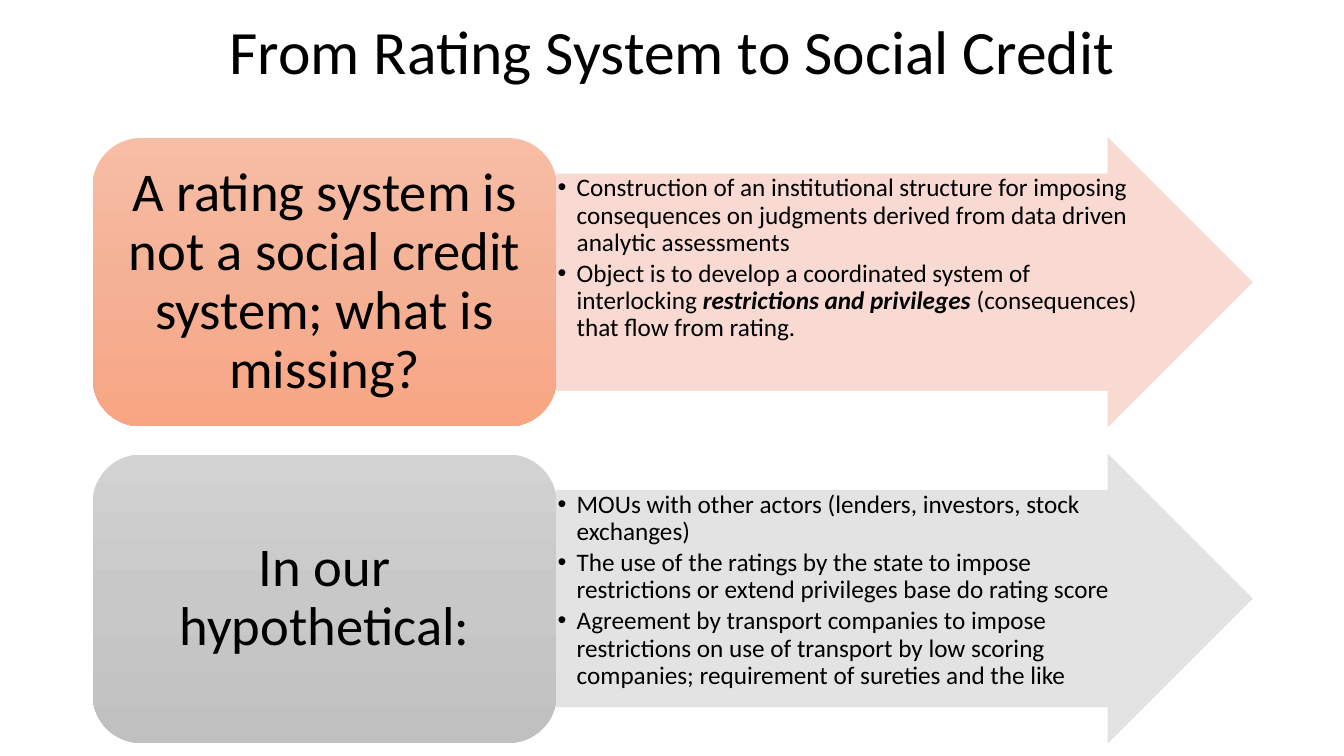
"""Build the slide on moving from a rating system to social credit."""
from copy import deepcopy

from lxml import etree
from pptx import Presentation
from pptx import util as u
from pptx.dml.color import RGBColor
from pptx.enum import shapes, text
from pptx.oxml import ns

COLOURS = {
    "text": "000000",
    "orange arrow": "F8D7CE",
    "orange": ("F7BDA5", "F5B196", "F8A582"),
    "grey arrow": "E1E1E1",
    "grey": ("D2D2D2", "C8C8C8", "C0C0C0"),
}
ROWS = [
    ("orange", "A rating system is not a social credit system; what is missing?", [
        ["Construction of an institutional structure for imposing consequences on "
         "judgments derived from data driven analytic assessments"],
        ["Object is to develop a coordinated system of interlocking ",
         "restrictions and privileges", " (consequences) that flow from rating."],
    ]),
    ("grey", "In our hypothetical:", [
        ["MOUs with other actors (lenders, investors, stock exchanges)"],
        ["The use of the ratings by the state to impose restrictions or extend "
         "privileges base do rating score"],
        ["Agreement by transport companies to impose restrictions on use of transport "
         "by low scoring companies; requirement of sureties and the like"],
    ]),
]
LEFT, TOP, PITCH, HEIGHT = 0.92, 1.37, 3.14, 2.86
LABEL_WIDTH, ARROW_WIDTH = 4.6, 6.9


def style_paragraph(paragraph, size, alignment, space_after=0):
    paragraph.alignment = alignment
    paragraph.line_spacing = 0.9
    paragraph.space_before = u.Pt(0)
    paragraph.space_after = u.Pt(space_after)
    paragraph.font.size = u.Pt(size)
    paragraph.font.name = "Calibri"
    paragraph.font.color.rgb = RGBColor.from_string(COLOURS["text"])


def prepare_frame(frame, anchor, side, edge):
    frame.word_wrap = True
    frame.auto_size = text.MSO_AUTO_SIZE.NONE
    frame.vertical_anchor = anchor
    frame.margin_left = frame.margin_right = u.Inches(side)
    frame.margin_top = frame.margin_bottom = u.Inches(edge)


prs = Presentation()
prs.slide_width, prs.slide_height = u.Inches(13.33), u.Inches(7.5)
slide = prs.slides.add_slide(prs.slide_layouts[5])

title = slide.shapes.title
title.left, title.top = u.Inches(LEFT), u.Inches(0)
title.width, title.height = u.Inches(11.5), u.Inches(1.09)
title.text_frame.text = "From Rating System to Social Credit"
prepare_frame(title.text_frame, text.MSO_ANCHOR.MIDDLE, 0.1, 0.05)
style_paragraph(title.text_frame.paragraphs[0], 44, text.PP_ALIGN.CENTER)

for row, (tone, heading, points) in enumerate(ROWS):
    top = u.Inches(TOP + row * PITCH)

    arrow = slide.shapes.add_shape(
        shapes.MSO_SHAPE.RIGHT_ARROW, u.Inches(LEFT + LABEL_WIDTH), top,
        u.Inches(ARROW_WIDTH), u.Inches(HEIGHT))
    arrow.shadow.inherit = False
    arrow.adjustments[0], arrow.adjustments[1] = 0.75, 0.5
    arrow.line.width = u.Pt(0.5)
    for paint in (arrow.fill, arrow.line.fill):
        paint.solid()
        paint.fore_color.rgb = RGBColor.from_string(COLOURS[f"{tone} arrow"])
    for colour in arrow.element.spPr.iter(ns.qn("a:srgbClr")):
        etree.SubElement(colour, ns.qn("a:alpha"), val="90000")

    prepare_frame(arrow.text_frame, text.MSO_ANCHOR.TOP, 0.01, 0.01)
    for index, parts in enumerate(points):
        point = arrow.text_frame.paragraphs[0] if index == 0 else arrow.text_frame.add_paragraph()
        properties = point._p.get_or_add_pPr()
        properties.set("marL", str(u.Inches(0.19)))
        properties.set("indent", str(-u.Inches(0.19)))
        etree.SubElement(properties, ns.qn("a:buFont"), typeface="Arial")
        etree.SubElement(properties, ns.qn("a:buChar"), char="•")
        style_paragraph(point, 18, text.PP_ALIGN.LEFT, 2.7)
        for position, part in enumerate(parts):
            run = point.add_run()
            run.text = part
            if position == 1:
                run.font.bold = run.font.italic = True

    label = slide.shapes.add_shape(
        shapes.MSO_SHAPE.ROUNDED_RECTANGLE, u.Inches(LEFT), top,
        u.Inches(LABEL_WIDTH), u.Inches(HEIGHT))
    label.shadow.inherit = False
    label.line.fill.background()
    label.fill.gradient()
    label.fill.gradient_angle = 270
    first_stop = label.element.spPr.find(".//" + ns.qn("a:gs"))
    first_stop.addnext(deepcopy(first_stop))
    for step, (stop, colour) in enumerate(zip(label.fill.gradient_stops, COLOURS[tone])):
        stop.position = step / 2
        stop.color.rgb = RGBColor.from_string(colour)

    prepare_frame(label.text_frame, text.MSO_ANCHOR.MIDDLE, 0.16, 0.08)
    label.text_frame.text = heading
    style_paragraph(label.text_frame.paragraphs[0], 39, text.PP_ALIGN.CENTER)

prs.save("out.pptx")
